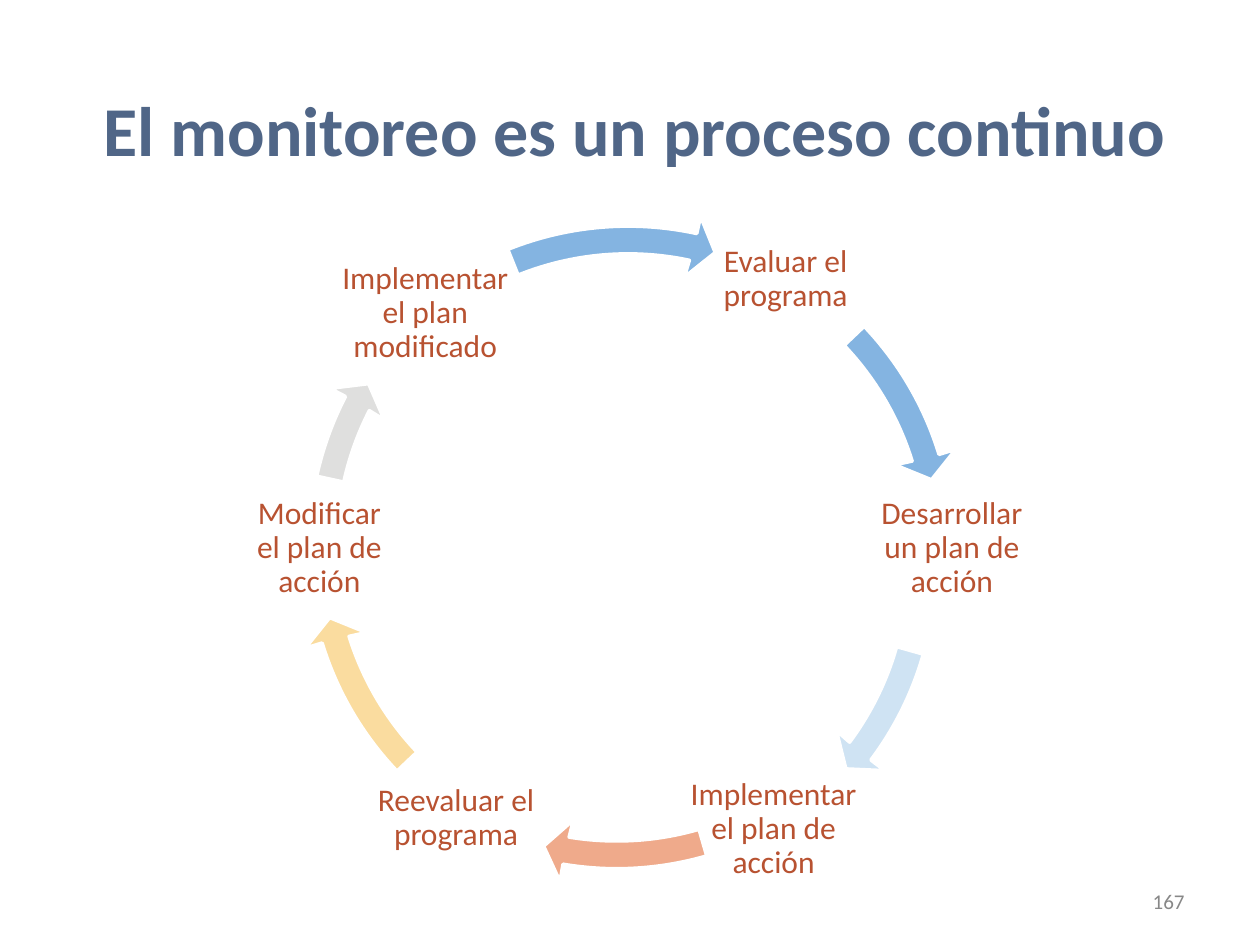
from dataclasses import dataclass
from math import cos, radians, sin, tan

from pptx import Presentation
from pptx.dml.color import RGBColor
from pptx.enum.text import MSO_ANCHOR as Anchor, PP_ALIGN as Align
from pptx.oxml.ns import qn
from pptx.util import Inches, Pt

COLORS = {
    "title": "506687", "label": "B85231", "number": "888888", "white": "FFFFFF",
    "blue": "84B4E1", "pale_blue": "CFE3F3", "salmon": "EFAA8B",
    "yellow": "FADC9F", "gray": "DFDFDE",
}
# Frame side and radii of the ring arrows, in inches
RING_SIZE = 5.41
OUTER, INNER = 2.56, 2.34
HEAD_OUTER, HEAD_INNER, TIP = 2.7, 2.2, 2.45
HEAD_SWEEP = 4.1  # degrees from the base of the head to its tip


@dataclass
class Label:
    text: str
    left: float
    top: float
    width: float
    height: float = 1.11
    size: int = 18
    color: str = "label"
    bold: bool = False
    align: Align = Align.CENTER
    spacing: float | None = 0.9
    inset_x: float = 0.02
    inset_y: float = 0.02


@dataclass
class RingArrow:
    """Clockwise arrow in a square frame; angles in degrees from three o'clock."""
    left: float
    top: float
    start: float
    end: float
    color: str


TITLE = Label("El monitoreo es un proceso continuo", 0.21, 0.34, 9.65, 1.45,
              size=40, color="title", bold=True, inset_x=0.1, inset_y=0.05)
PAGE_NUMBER = Label("167", 7.17, 6.95, 2.33, 0.4, size=12, color="number",
                    align=Align.RIGHT, spacing=None, inset_x=0.1, inset_y=0.05)
STEPS = [
    (Label("Evaluar el programa", 5.68, 1.66, 1.11),
     RingArrow(2.3, 1.65, -43.6, -17, "blue")),
    (Label("Desarrollar un plan de acción", 6.92, 3.8, 1.27),
     RingArrow(2.16, 1.79, 15.8, 36.9, "pale_blue")),
    (Label("Implementar el plan de acción", 5.44, 6.03, 1.4),
     RingArrow(2.19, 1.63, 73.8, 99.6, "salmon")),
    (Label("Reevaluar el programa", 2.92, 5.94, 1.4),
     RingArrow(2.3, 1.65, 136.4, 163, "yellow")),
    (Label("Modificar el plan de acción", 1.98, 3.8, 1.11),
     RingArrow(2.31, 1.62, 192.3, 207.4, "gray")),
    (Label("Implementar el plan modificado", 2.69, 1.93, 1.37),
     RingArrow(2.28, 1.65, 248.1, 282.3, "blue")),
]


def rgb(name: str) -> RGBColor:
    return RGBColor.from_string(COLORS[name])


def add_label(page, label: Label) -> None:
    box = page.shapes.add_textbox(*map(Inches, (label.left, label.top, label.width, label.height)))
    frame = box.text_frame
    frame_format = {
        "word_wrap": True, "vertical_anchor": Anchor.MIDDLE,
        "margin_left": Inches(label.inset_x), "margin_right": Inches(label.inset_x),
        "margin_top": Inches(label.inset_y), "margin_bottom": Inches(label.inset_y),
    }
    for name, value in frame_format.items():
        setattr(frame, name, value)
    para = frame.paragraphs[0]
    para.alignment = label.align
    para.line_spacing = label.spacing
    span = para.add_run()
    span.text = label.text
    font_format = {"name": "Calibri", "size": Pt(label.size), "bold": label.bold}
    for name, value in font_format.items():
        setattr(span.font, name, value)
    span.font.color.rgb = rgb(label.color)


def merge_into_curve(lines: list) -> None:
    """Turn three line segments into one cubic curve through their points."""
    first, *others = lines
    first.tag = qn("a:cubicBezTo")
    for line in others:
        first.append(line[0])
        first.getparent().remove(line)


def fit_to_frame(shape, arrow: RingArrow) -> None:
    """Widen the shape to its square frame while its outline stays in place."""
    side, left, top = map(Inches, (RING_SIZE, arrow.left, arrow.top))
    for point in shape._element.iter(qn("a:pt")):
        point.set("x", str(int(point.get("x")) + shape.left - left))
        point.set("y", str(int(point.get("y")) + shape.top - top))
    for outline in shape._element.iter(qn("a:path")):
        outline.set("w", str(side))
        outline.set("h", str(side))
    frame = {"left": left, "top": top, "width": side, "height": side}
    for name, value in frame.items():
        setattr(shape, name, value)


def add_ring_arrow(page, arrow: RingArrow) -> None:
    def point(radius: float, degrees: float, along: float = 0) -> tuple[int, int]:
        """Point on a circle, moved along its tangent by a share of the radius."""
        angle = radians(degrees)
        x = radius * (cos(angle) - along * sin(angle))
        y = radius * (sin(angle) + along * cos(angle))
        return (Inches(arrow.left + RING_SIZE / 2 + x),
                Inches(arrow.top + RING_SIZE / 2 + y))

    def arc(radius: float, start: float, end: float) -> list[tuple[int, int]]:
        handle = 4 / 3 * tan(radians(end - start) / 4)
        return [point(radius, start, handle), point(radius, end, -handle), point(radius, end)]

    neck = arrow.end - 0.3
    builder = page.shapes.build_freeform(*point(OUTER, arrow.start))
    builder.add_line_segments([
        *arc(OUTER, arrow.start, arrow.end),
        point(HEAD_OUTER, arrow.end),
        point(TIP, arrow.end + HEAD_SWEEP),
        point(HEAD_INNER, arrow.end - 0.6),
        point(INNER, neck),
        *arc(INNER, neck, arrow.start),
    ], close=True)
    shape = builder.convert_to_shape()
    lines = list(shape._element.iter(qn("a:lnTo")))
    merge_into_curve(lines[:3])
    merge_into_curve(lines[7:10])
    fit_to_frame(shape, arrow)
    shape.shadow.inherit = False
    shape.fill.solid()
    shape.fill.fore_color.rgb = rgb(arrow.color)
    shape.line.color.rgb = rgb("white")
    shape.line.width = Pt(2)


def main() -> None:
    deck = Presentation()
    deck.slide_width, deck.slide_height = Inches(10), Inches(7.5)
    page = deck.slides.add_slide(deck.slide_layouts[6])
    add_label(page, TITLE)
    for label, arrow in STEPS:
        add_label(page, label)
        add_ring_arrow(page, arrow)
    add_label(page, PAGE_NUMBER)
    deck.save("out.pptx")


if __name__ == "__main__":
    main()
